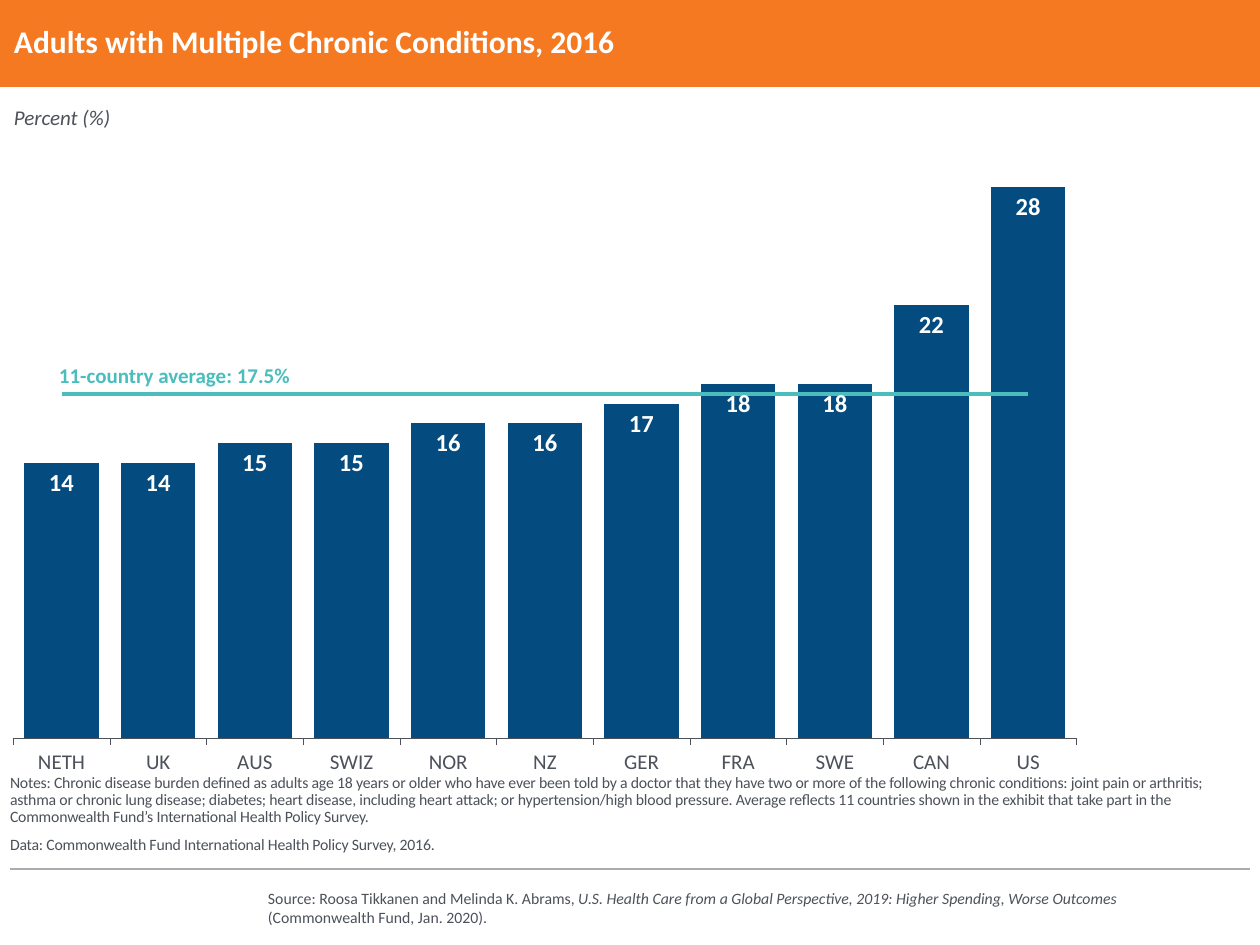
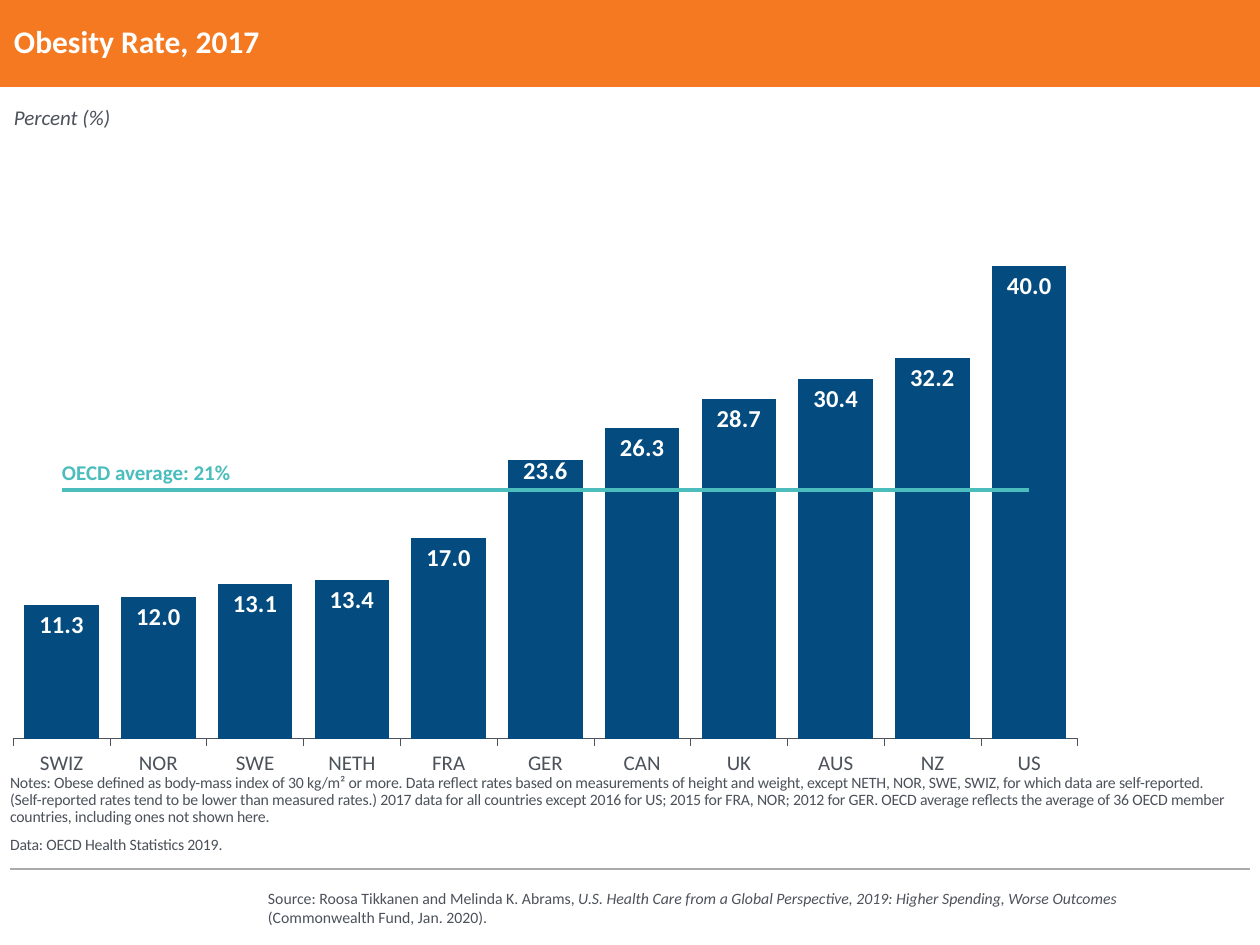
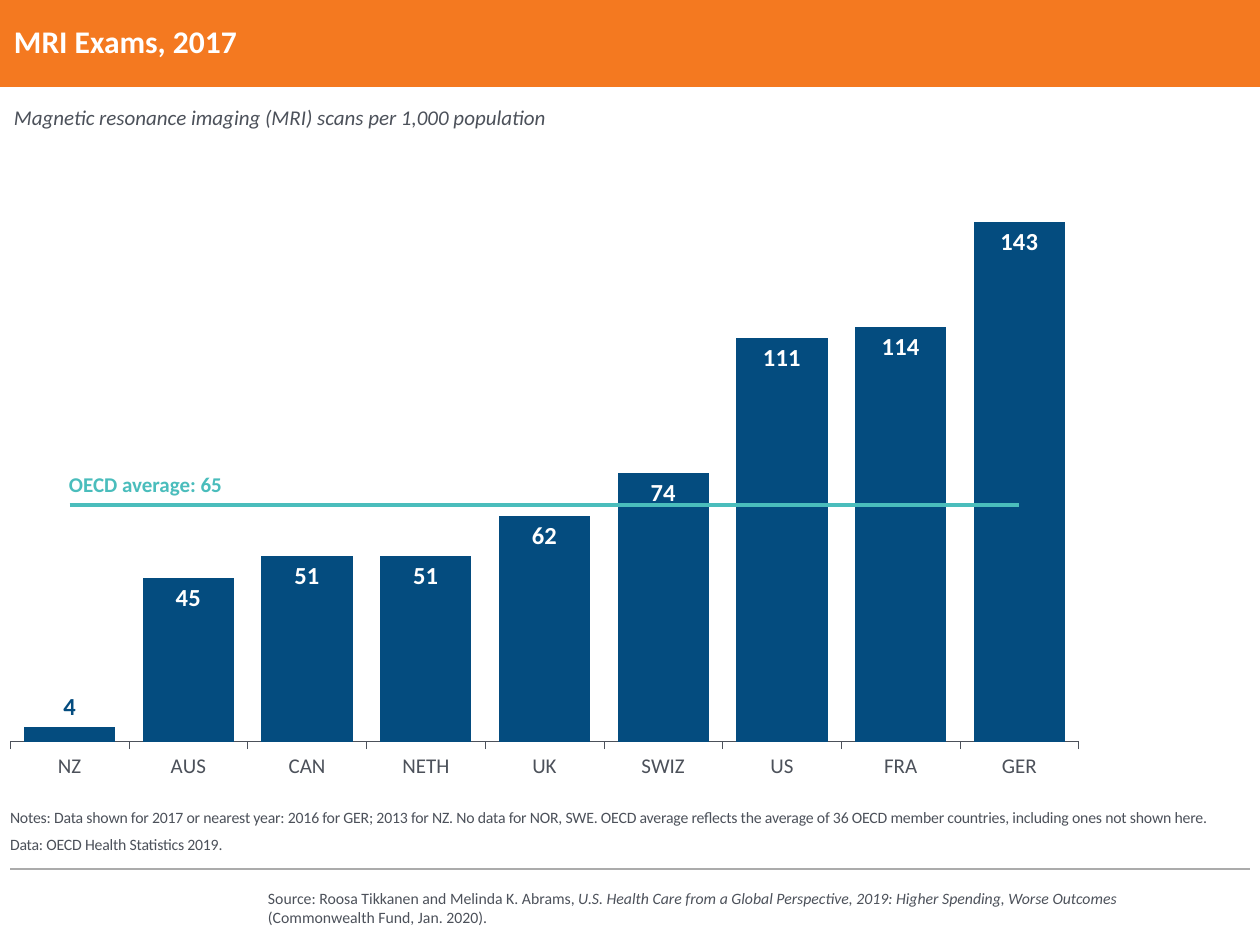
from pptx import Presentation, util as u
from pptx.chart.data import CategoryChartData
from pptx.dml.color import RGBColor
from pptx.enum import chart as ch, shapes, text
from pptx.oxml import parse_xml
from pptx.oxml.ns import nsdecls

PX = u.Inches(1) / 126
FONT = "Calibri"
ORANGE, NAVY, TEAL = "F47920", "044C7F", "4ABDBC"
INK, RULE, WHITE = "4C515A", "ABABAB", "FFFFFF"
FOOT = 854
SOURCE = [
    ("Source: Roosa Tikkanen and Melinda K. Abrams, ", False),
    ("U.S. Health Care from a Global Perspective, 2019: Higher Spending, Worse Outcomes ", True),
    ("(Commonwealth Fund, Jan. 2020).", False),
]


def px(*nums):
    return [u.Emu(round(n * PX)) for n in nums]


def color(code):
    return RGBColor.from_string(code)


def style(font, size, code, bold=False, italic=False, name=FONT):
    font.name, font.size = name, u.Pt(size)
    font.bold, font.italic = bold, italic
    font.color.rgb = color(code)


def write(slide, box, paras, size=12, code=INK, bold=False, italic=False,
          anchor="TOP", inset=(0, 0), lead=None, after=None, track=None):
    frame = slide.shapes.add_textbox(*px(*box)).text_frame
    frame.word_wrap = True
    frame.vertical_anchor = getattr(text.MSO_ANCHOR, anchor)
    frame.margin_left = frame.margin_right = px(inset[0])[0]
    frame.margin_top = frame.margin_bottom = px(inset[1])[0]
    for i, runs in enumerate(paras):
        para = frame.add_paragraph() if i else frame.paragraphs[0]
        if lead:
            para.line_spacing = lead
        if after:
            para.space_after = u.Pt(after)
        for words, slant in [(runs, italic)] if isinstance(runs, str) else runs:
            for j, line in enumerate(words.split("\n")):
                if j:
                    para.add_line_break()
                run = para.add_run()
                run.text = line
                style(run.font, size, code, bold, slant)
                if track:
                    run._r.get_or_add_rPr().set("spc", str(track))


def frame_page(slide):
    band = slide.shapes.add_shape(shapes.MSO_SHAPE.RECTANGLE, *px(0, 0, 1260, 87))
    band.shadow.inherit = False
    band.fill.solid()
    band.fill.fore_color.rgb = color(ORANGE)
    band.line.fill.background()
    rule = slide.shapes.add_connector(shapes.MSO_CONNECTOR.STRAIGHT, *px(1250, 869, 10, 869))
    rule.line.color.rgb = color(RULE)
    rule.line.width = u.Pt(0.75)
    rule._element.spPr.append(parse_xml(f"<a:effectLst {nsdecls('a')}/>"))
    write(slide, (255, 883, 951, 50), [SOURCE], size=9, inset=(13, 6))


def place_plot(chart, spot):
    area = chart.element.chart.plotArea
    for old in area.xpath("c:layout"):
        area.remove(old)
    sides = "".join(f'<c:{k} val="{v}"/>' for k, v in zip("xywh", spot))
    area.insert(0, parse_xml(
        f"<c:layout {nsdecls('c')}><c:manualLayout>"
        '<c:layoutTarget val="inner"/><c:xMode val="edge"/><c:yMode val="edge"/>'
        f"{sides}</c:manualLayout></c:layout>"))


def split_line(chart):
    bars = chart.element.xpath(".//c:barChart")[0]
    ser = bars.xpath("c:ser")[1]
    for flag in ser.xpath("c:invertIfNegative"):
        ser.remove(flag)
    axes = "".join(f'<c:axId val="{v}"/>' for v in bars.xpath("c:axId/@val"))
    group = parse_xml(
        f"<c:lineChart {nsdecls('c')}><c:grouping val=\"standard\"/>"
        f'<c:varyColors val="0"/><c:marker val="1"/>{axes}</c:lineChart>')
    group.insert(2, ser)
    bars.addnext(group)
    line = chart.plots[1].series[0]
    line.smooth = False
    line.marker.style = ch.XL_MARKER_STYLE.NONE
    line.format.line.color.rgb = color(TEAL)
    line.format.line.width = u.Pt(2.25)


def bar_chart(slide, tall, cats, vals, mean, top, step, spot, fmt):
    data = CategoryChartData(number_format=fmt)
    data.categories = cats
    data.add_series("Series 1", vals)
    data.add_series("Series 2", [mean] * len(vals))
    chart = slide.shapes.add_chart(
        ch.XL_CHART_TYPE.COLUMN_CLUSTERED, *px(10, 145, 1072, tall), data).chart
    chart.has_legend = chart.has_title = False
    style(chart.font, 11, INK, name="Arial")
    split_line(chart)
    place_plot(chart, spot)

    scale = chart.value_axis
    scale.visible = scale.has_major_gridlines = False
    scale.minimum_scale, scale.maximum_scale, scale.major_unit = 0, top, step
    axis = chart.category_axis
    axis.major_tick_mark = ch.XL_TICK_MARK.OUTSIDE
    axis.format.line.color.rgb = color(INK)
    axis.format.line.width = u.Pt(0.3)
    style(axis.tick_labels.font, 12, INK)

    plot = chart.plots[0]
    plot.gap_width = 30
    plot.vary_by_categories = False
    bars = plot.series[0]
    bars.format.fill.solid()
    bars.format.fill.fore_color.rgb = color(NAVY)
    tags = bars.data_labels
    tags.show_value = True
    tags.number_format, tags.number_format_is_linked = fmt, False
    tags.position = ch.XL_LABEL_POSITION.INSIDE_END
    style(tags.font, 14, WHITE, bold=True)
    return bars


def mark(bars, i, code, spot, lift=0):
    tag = bars.points[i].data_label
    style(tag.font, 14, code, bold=True)
    tag.position = getattr(ch.XL_LABEL_POSITION, spot)
    if lift:
        idx = bars._element.xpath(f"c:dLbls/c:dLbl/c:idx[@val='{i}']")[0]
        idx.addnext(parse_xml(
            f"<c:layout {nsdecls('c')}><c:manualLayout>"
            f'<c:x val="0"/><c:y val="{-lift}"/></c:manualLayout></c:layout>'))


def page(deck, title, unit, plot, mean, spot, notes, top=767):
    slide = deck.slides.add_slide(deck.slide_layouts[6])
    frame_page(slide)
    bars = bar_chart(slide, **plot)
    write(slide, (14, 0, 1240, 87), [title], size=18, code=WHITE, bold=True,
          anchor="MIDDLE", lead=0.9)
    write(slide, (10, top, 1240, FOOT - top), notes, size=9, anchor="BOTTOM",
          lead=0.9, after=6, track=-10)
    write(slide, (*spot, 25), [mean], code=TEAL, bold=True)
    write(slide, (14, 105, 606, 25), [unit], italic=True)
    return bars


def main():
    deck = Presentation()
    deck.slide_width, deck.slide_height = u.Inches(10), u.Inches(7.5)

    page(deck, "Adults with Multiple Chronic Conditions, 2016", "Percent (%)",
         dict(tall=635, cats="NETH UK AUS SWIZ NOR NZ GER FRA SWE CAN US".split(),
              vals=[14, 14, 15, 15, 16, 16, 17, 18, 18, 22, 28], mean=17.5,
              top=30, step=5, spot=(0.003, 0.005, 0.992, 0.929), fmt="#,##0"),
         "11-country average: 17.5%", (59, 363, 353),
         ["Notes: Chronic disease burden defined as adults age 18 years or older who have ever been told by a doctor that they have two or more of the following chronic conditions: joint pain or arthritis; asthma or chronic lung disease; diabetes; heart disease, including heart attack; or hypertension/high blood pressure. Average reflects 11 countries shown in the exhibit that take part in the Commonwealth Fund’s International Health Policy Survey.",
          "Data: Commonwealth Fund International Health Policy Survey, 2016."])

    rates = page(
        deck, "Obesity Rate, 2017", "Percent (%)",
        dict(tall=631, cats="SWIZ NOR SWE NETH FRA GER CAN UK AUS NZ US".split(),
             vals=[11.3, 12, 13.1, 13.4, 17, 23.6, 26.3, 28.7, 30.4, 32.2, 40], mean=21,
             top=50, step=10, spot=(0.003, 0.004, 0.993, 0.941), fmt="#,##0.0"),
        "OECD average: 21%", (62, 460, 241),
        ["Notes: Obese defined as body-mass index of 30 kg/m² or more. Data reflect rates based on measurements of height and weight, except NETH, NOR, SWE, SWIZ, for which data are self-reported.\n(Self-reported rates tend to be lower than measured rates.) 2017 data for all countries except 2016 for US; 2015 for FRA, NOR; 2012 for GER. OECD average reflects the average of 36 OECD member countries, including ones not shown here.",
         "Data: OECD Health Statistics 2019."])
    mark(rates, 5, WHITE, "INSIDE_END", lift=0.013)

    scans = page(
        deck, "MRI Exams, 2017", "Magnetic resonance imaging (MRI) scans per 1,000 population",
        dict(tall=634, cats="NZ AUS CAN NETH UK SWIZ US FRA GER".split(),
             vals=[4, 45, 51, 51, 62, 74, 111, 114, 143], mean=65,
             top=160, step=20, spot=(0, 0.024, 0.997, 0.918), fmt="#,##0"),
        "OECD average: 65", (69, 472, 214),
        ["Notes: Data shown for 2017 or nearest year: 2016 for GER; 2013 for NZ. No data for NOR, SWE. OECD average reflects the average of 36 OECD member countries, including ones not shown here.",
         "Data: OECD Health Statistics 2019."], top=785)
    mark(scans, 0, NAVY, "OUTSIDE_END")

    deck.save("out.pptx")


if __name__ == "__main__":
    main()
